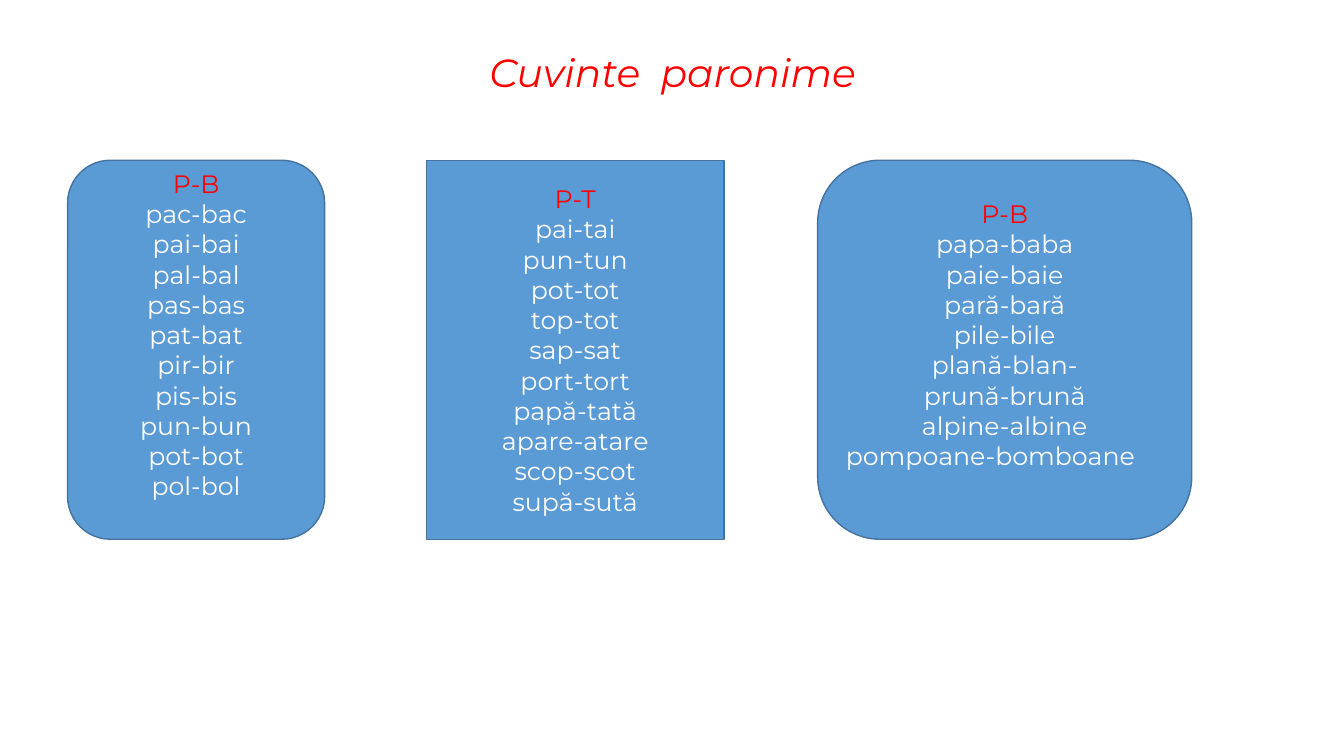
from pptx import Presentation
from pptx.dml.color import RGBColor
from pptx.enum.shapes import MSO_SHAPE as Shape
from pptx.enum.text import MSO_ANCHOR as Anchor, MSO_AUTO_SIZE as Fit, PP_ALIGN as Align
from pptx.util import Inches, Pt

RED = RGBColor(0xFF, 0x00, 0x00)
WHITE = RGBColor(0xFF, 0xFF, 0xFF)
BLUE = RGBColor(0x5B, 0x9B, 0xD5)
EDGE = RGBColor(0x43, 0x73, 0x9E)

# Content
TITLE = "Cuvinte  paronime"
CARDS = [
    {"head": "P-B", "left": 0.67, "width": 2.55, "round": 0.1667, "lift": 0.3,
     "pairs": ["pac-bac", "pai-bai", "pal-bal", "pas-bas", "pat-bat",
               "pir-bir", "pis-bis", "pun-bun", "pot-bot", "pol-bol"]},
    {"head": "P-T", "left": 4.23, "width": 2.95, "round": 0, "lift": 0,
     "pairs": ["pai-tai", "pun-tun", "pot-tot", "top-tot", "sap-sat",
               "port-tort", "papă-tată", "apare-atare", "scop-scot", "supă-sută"]},
    {"head": "P-B", "left": 8.11, "width": 3.71, "round": 0.1667, "lift": 0.3,
     "pairs": ["papa-baba", "paie-baie", "pară-bară", "pile-bile", "plană-blan-",
               "prună-brună", "alpine-albine", "pompoane-bomboane"]},
]
LEFT_SET = {"pompoane-bomboane"}
TOP, HEIGHT = 1.59, 3.76
TITLE_FONT = {"name": "Montserrat", "size": Pt(28), "italic": True}
CARD_FONT = {"name": "Montserrat", "size": Pt(18)}


def write(para, text, style, color, align=Align.CENTER):
    run = para.add_run()
    run.text = text
    for key, value in style.items():
        setattr(run.font, key, value)
    run.font.color.rgb = color
    para.alignment = align


def add_card(slide, card):
    box = slide.shapes.add_shape(
        Shape.ROUNDED_RECTANGLE, Inches(card["left"]), Inches(TOP),
        Inches(card["width"]), Inches(HEIGHT))
    box.adjustments[0] = card["round"]
    box.shadow.inherit = False
    box.fill.solid()
    box.fill.fore_color.rgb = BLUE
    box.line.color.rgb = EDGE
    box.line.width = Pt(1)

    # A larger bottom margin lifts the centred words
    frame = box.text_frame
    frame.word_wrap = True
    frame.vertical_anchor = Anchor.MIDDLE
    frame.margin_top = 0
    frame.margin_bottom = Inches(card["lift"])
    write(frame.paragraphs[0], card["head"], CARD_FONT, RED)
    for pair in card["pairs"]:
        align = Align.LEFT if pair in LEFT_SET else Align.CENTER
        write(frame.add_paragraph(), pair, CARD_FONT, WHITE, align)


def main():
    deck = Presentation()
    deck.slide_width, deck.slide_height = Inches(13.33), Inches(7.5)
    slide = deck.slides.add_slide(deck.slide_layouts[5])

    # Title
    title = slide.shapes.title
    title.left, title.top = Inches(0.92), Inches(0.4)
    title.width, title.height = Inches(11.5), Inches(0.69)
    frame = title.text_frame
    frame.auto_size = Fit.NONE
    frame.vertical_anchor = Anchor.MIDDLE
    para = frame.paragraphs[0]
    para.line_spacing = 0.9
    write(para, TITLE, TITLE_FONT, RED)

    # Word cards
    for card in CARDS:
        add_card(slide, card)

    deck.save("out.pptx")


if __name__ == "__main__":
    main()
